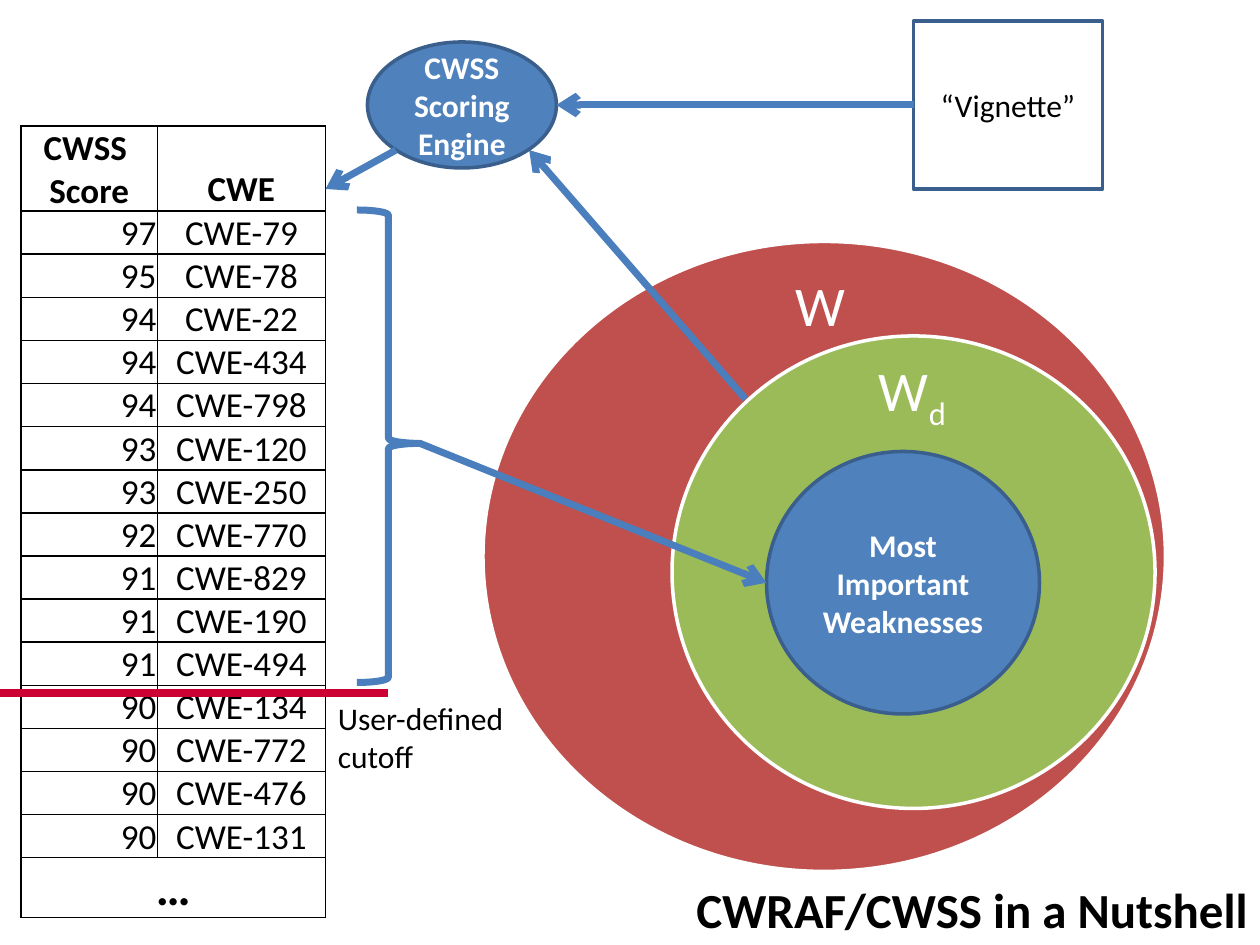
from dataclasses import dataclass

from lxml import etree
from pptx import Presentation
from pptx.dml.color import RGBColor
from pptx.enum.shapes import MSO_CONNECTOR, MSO_SHAPE
from pptx.enum.text import MSO_ANCHOR, PP_ALIGN
from pptx.oxml import parse_xml
from pptx.oxml.ns import nsdecls, qn
from pptx.util import Emu, Pt

ELLIPSE, RECT, BRACE = MSO_SHAPE.OVAL, MSO_SHAPE.RECTANGLE, MSO_SHAPE.LEFT_BRACE
STRAIGHT = MSO_CONNECTOR.STRAIGHT
LEFT, CENTER, RIGHT = PP_ALIGN.LEFT, PP_ALIGN.CENTER, PP_ALIGN.RIGHT
TOP, MIDDLE, BOTTOM = MSO_ANCHOR.TOP, MSO_ANCHOR.MIDDLE, MSO_ANCHOR.BOTTOM
LEFT_SIDE = 1


@dataclass(frozen=True)
class Theme:
    font: str = "Calibri"
    black: str = "000000"
    white: str = "FFFFFF"
    red: str = "C0504D"
    green: str = "9BBB59"
    blue: str = "4F81BD"
    outline: str = "3A5F8C"
    arrow: str = "4B7EBC"
    cutoff: str = "CC0033"
    body: int = 18
    cell: int = 20
    title: int = 28
    set_name: int = 32


T = Theme()

SCORES = [
    (97, 79), (95, 78), (94, 22), (94, 434), (94, 798),
    (93, 120), (93, 250), (92, 770), (91, 829), (91, 190),
    (91, 494), (90, 134), (90, 772), (90, 476), (90, 131),
]


def px(n):
    return Emu(round(n * 7620))


def rgb(color):
    return RGBColor.from_string(color)


def write(tf, lines, size, color, align, bold=False, anchor=MIDDLE):
    tf.word_wrap = True
    tf.vertical_anchor = anchor
    for i, line in enumerate(lines):
        p = tf.paragraphs[0] if i == 0 else tf.add_paragraph()
        p.alignment = align
        p.font.name, p.font.size, p.font.bold = T.font, Pt(size), bold
        p.font.color.rgb = rgb(color)
        p.add_run().text = line


def add_text(s, box, text, size, color, align, bold=False, anchor=TOP):
    sp = s.shapes.add_textbox(*map(px, box))
    write(sp.text_frame, [text], size, color, align, bold, anchor)
    return sp


def add_outlined(s, kind, box, fill, line, width=2):
    sp = s.shapes.add_shape(kind, *map(px, box))
    sp.shadow.inherit = False
    if fill:
        sp.fill.solid()
        sp.fill.fore_color.rgb = rgb(fill)
    else:
        sp.fill.background()
    sp.line.color.rgb = rgb(line)
    sp.line.width = Pt(width)
    return sp


def add_line(s, start, end, color, width, arrow=True):
    line = s.shapes.add_connector(STRAIGHT, *map(px, start + end))
    line.line.color.rgb = rgb(color)
    line.line.width = Pt(width)
    if arrow:
        etree.SubElement(line.line._get_or_add_ln(), qn("a:tailEnd"), type="arrow")
    etree.SubElement(line._element.spPr, qn("a:effectLst"))
    return line


def add_set(s, box, fill, label_box, subscript=""):
    add_outlined(s, ELLIPSE, box, fill, T.white)
    x, y, w, h = label_box
    sp = add_text(s, (box[0] + x, box[1] + y, w, h), "W",
                  T.set_name, T.white, CENTER, anchor=MIDDLE)
    p = sp.text_frame.paragraphs[0]
    p.line_spacing = 0.9
    if subscript:
        r = p.add_run()
        r.text = subscript
        r.font._element.set("baseline", "-25000")


def add_weakness_sets(s, box):
    x, y, w, h = box
    add_set(s, box, T.red, (199, 34, 244, 60))
    add_set(s, (x + 180, y + 90, 460, 450), T.green, (130, 26, 198, 52), "d")


def fill_cell(cell, lines, align, size=T.cell, bold=False):
    cell.fill.background()
    cell.margin_left = cell.margin_right = cell.margin_top = px(1)
    cell.margin_bottom = 0
    write(cell.text_frame, lines, size, T.black, align, bold)
    cell.vertical_anchor = BOTTOM


def add_borders(cell):
    tcPr = cell._tc.get_or_add_tcPr()
    for i, side in enumerate(("lnL", "lnR", "lnT", "lnB")):
        tcPr.insert(i, parse_xml(
            f'<a:{side} {nsdecls("a")} w="12700"><a:solidFill>'
            f'<a:srgbClr val="{T.black}"/></a:solidFill></a:{side}>'))


def add_score_table(s, box):
    count = len(SCORES) + 2
    table = s.shapes.add_table(count, 2, *map(px, box)).table
    table.first_row = table.horz_banding = False
    for col, width in zip(table.columns, (130, 160)):
        col.width = px(width)
    for row, height in zip(table.rows, [80] + [41] * len(SCORES) + [57]):
        row.height = px(height)
    fill_cell(table.cell(0, 0), ["CWSS ", "Score"], CENTER, bold=True)
    fill_cell(table.cell(0, 1), ["CWE"], CENTER, bold=True)
    for i, (score, cwe) in enumerate(SCORES, 1):
        fill_cell(table.cell(i, 0), [str(score)], RIGHT)
        fill_cell(table.cell(i, 1), [f"CWE-{cwe}"], CENTER)
    last = table.cell(count - 1, 0)
    last.merge(table.cell(count - 1, 1))
    fill_cell(last, ["…"], CENTER, T.title, True)
    for cell in table.iter_cells():
        add_borders(cell)


def add_cutoff(s, box):
    x, y, w, h = box
    add_line(s, (x, y), (x + 370, y), T.cutoff, 5, arrow=False)
    add_text(s, (x + 310, y, w - 310, h), "User-defined cutoff", T.body, T.black, LEFT)


def add_engine(s, box):
    x, y, w, h = box
    add_line(s, (x + 360, y + 340), (x + 154, y + 103), T.arrow, 4)
    sp = add_outlined(s, ELLIPSE, box, T.blue, T.outline)
    write(sp.text_frame, ["CWSS", "Scoring Engine"], T.body, T.white, CENTER, True)
    add_line(s, (x + 27, y + 103), (x - 40, y + 140), T.arrow, 4)


def add_top_weaknesses(s, box, brace_box):
    x, y, w, h = box
    bx, by, bw, bh = brace_box
    tip = 0.494
    brace = add_outlined(s, BRACE, brace_box, None, T.arrow, 4)
    brace.adjustments[0], brace.adjustments[1] = 0.083, tip
    brace._element.spPr.xfrm.set("flipH", "1")
    sp = add_outlined(s, ELLIPSE, box, T.blue, T.outline)
    write(sp.text_frame, ["Most Important Weaknesses"], T.body, T.white, CENTER, True)
    add_line(s, (bx + bw, by + bh * tip), (x, y + h / 2), T.arrow, 4)


def add_vignette(s, box, target):
    x, y, w, h = box
    sp = add_outlined(s, RECT, box, None, T.outline)
    write(sp.text_frame, ["“Vignette”"], T.body, T.black, CENTER)
    line = add_line(s, (x, y + h / 2), target, T.arrow, 4)
    line.begin_connect(sp, LEFT_SIDE)


def main():
    prs = Presentation()
    prs.slide_width, prs.slide_height = px(1200), px(900)
    s = prs.slides.add_slide(prs.slide_layouts[6])
    add_text(s, (520, 832, 680, 68), "CWRAF/CWSS in a Nutshell",
             T.title, T.black, RIGHT, True)
    add_weakness_sets(s, (460, 230, 650, 600))
    add_score_table(s, (20, 120, 290, 752))
    add_cutoff(s, (0, 660, 540, 85))
    add_engine(s, (350, 40, 180, 120))
    add_top_weaknesses(s, (730, 430, 260, 250), (340, 200, 60, 450))
    add_vignette(s, (870, 20, 180, 160), (530, 100))
    prs.save("out.pptx")


if __name__ == "__main__":
    main()
